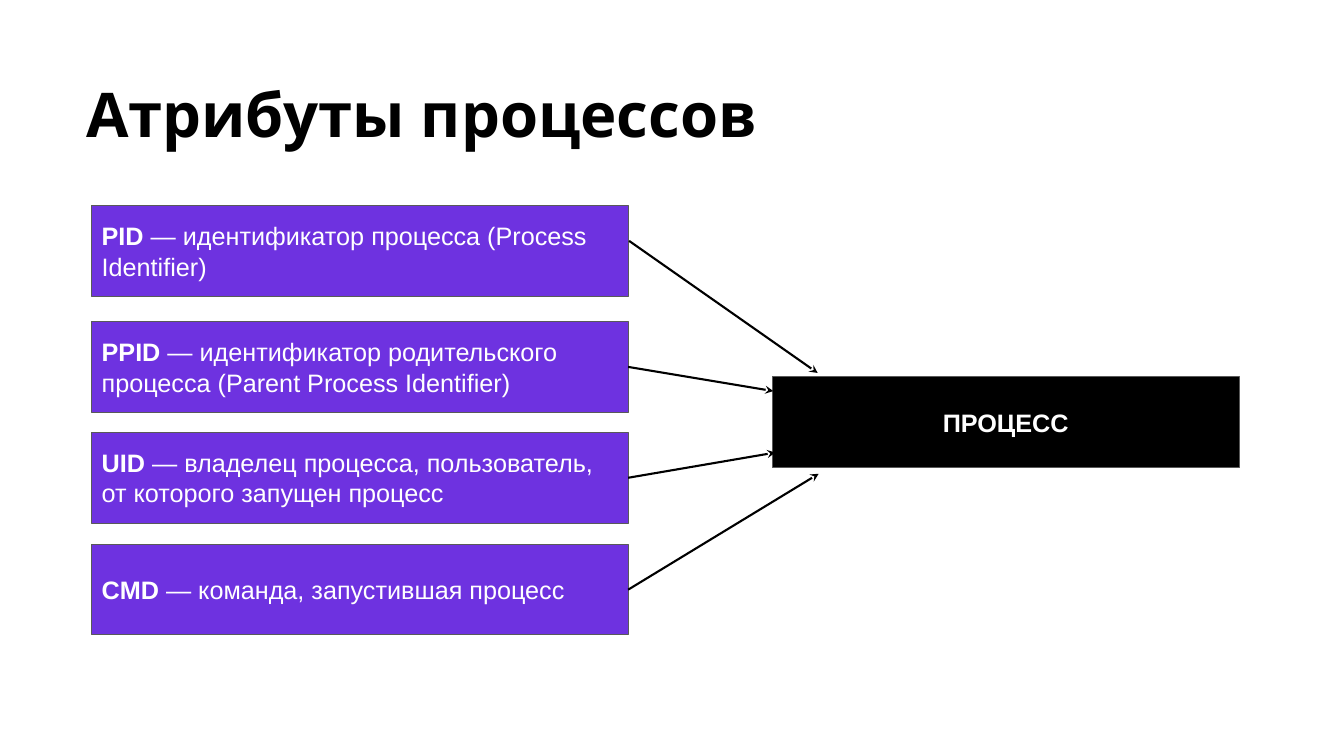
from lxml.etree import SubElement
from pptx import Presentation
from pptx.dml.color import RGBColor
from pptx.enum.shapes import MSO_CONNECTOR as Connector, MSO_SHAPE as Shape
from pptx.enum.text import MSO_ANCHOR as Anchor, PP_ALIGN as Align
from pptx.oxml.ns import qn
from pptx.util import Inches, Pt

COLORS = {"attribute": "6E32E0", "process": "000000", "border": "595959",
          "ink": "000000", "light": "FFFFFF"}

ATTRIBUTES = [
    ("PID", " — идентификатор процесса (Process Identifier)"),
    ("PPID", " — идентификатор родительского процесса (Parent Process Identifier)"),
    ("UID", " — владелец процесса, пользователь, от которого запущен процесс"),
    ("CMD", " — команда, запустившая процесс"),
]
ATTRIBUTE_TOPS = [2.04, 3.19, 4.29, 5.4]
ARROWS = [
    ((6.24, 2.39), (8.11, 3.7)),
    ((6.23, 3.64), (7.67, 3.88)),
    ((6.23, 4.74), (7.69, 4.49)),
    ((6.23, 5.85), (8.12, 4.7)),
]
BOX_HEIGHT = 0.9


def color(name):
    return RGBColor.from_string(COLORS[name])


def add_text(paragraph, text, size=18, font="Arial", ink="light", bold=False):
    run = paragraph.add_run()
    run.text = text
    run.font.size = Pt(size)
    run.font.name = font
    run.font.bold = bold
    run.font.color.rgb = color(ink)


def set_frame(frame, anchor, side, edge):
    frame.word_wrap = True
    frame.vertical_anchor = anchor
    frame.margin_left = frame.margin_right = Inches(side)
    frame.margin_top = frame.margin_bottom = Inches(edge)


def add_title(slide, text):
    title = slide.shapes.title
    title.left, title.top = Inches(0.76), Inches(0.76)
    title.width, title.height = Inches(11.82), Inches(1.05)
    set_frame(title.text_frame, Anchor.TOP, 0.1, 0.05)
    heading = title.text_frame.paragraphs[0]
    heading.alignment = Align.LEFT
    heading.line_spacing = 0.95
    add_text(heading, text, size=44, font="Karla", ink="ink", bold=True)


def add_box(slide, left, top, width, fill, term, meaning="", align=Align.LEFT):
    box = slide.shapes.add_shape(Shape.RECTANGLE, Inches(left), Inches(top),
                                 Inches(width), Inches(BOX_HEIGHT))
    box.shadow.inherit = False
    box.fill.solid()
    box.fill.fore_color.rgb = color(fill)
    box.line.color.rgb = color("border")
    box.line.width = Pt(0.75)
    set_frame(box.text_frame, Anchor.MIDDLE, 0.1, 0.1)
    label = box.text_frame.paragraphs[0]
    label.alignment = align
    add_text(label, term, bold=True)
    if meaning:
        add_text(label, meaning)


def add_arrow(slide, start, end):
    arrow = slide.shapes.add_connector(Connector.STRAIGHT,
                                       *map(Inches, start + end))
    arrow.line.color.rgb = color("ink")
    arrow.line.width = Pt(1.5)
    properties = arrow.element.spPr
    SubElement(properties.find(qn("a:ln")), qn("a:tailEnd"), type="stealth")
    SubElement(properties, qn("a:effectLst"))


def main():
    deck = Presentation()
    deck.slide_width, deck.slide_height = Inches(13.33), Inches(7.5)
    slide = deck.slides.add_slide(deck.slide_layouts[5])
    add_title(slide, "Атрибуты процессов")
    for top, (term, meaning) in zip(ATTRIBUTE_TOPS, ATTRIBUTES):
        add_box(slide, 0.91, top, 5.32, "attribute", term, meaning)
    add_box(slide, 7.66, 3.74, 4.63, "process", "ПРОЦЕСС", align=Align.CENTER)
    for start, end in ARROWS:
        add_arrow(slide, start, end)
    deck.save("out.pptx")


if __name__ == "__main__":
    main()
